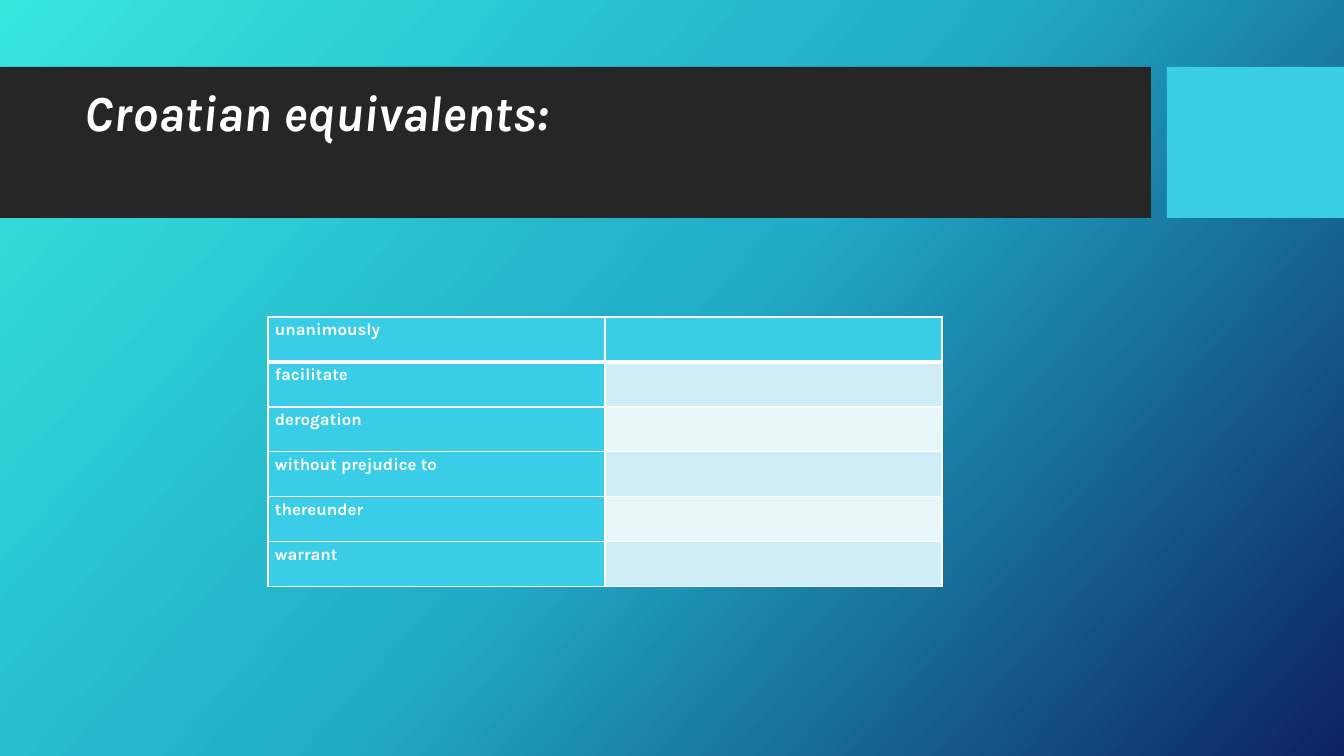
import copy

import pptx
import pptx.dml.color
import pptx.enum.shapes
import pptx.enum.text
import pptx.oxml.ns
import pptx.oxml.xmlchemy
import pptx.util
from lxml import etree

RGBColor = pptx.dml.color.RGBColor
qn = pptx.oxml.ns.qn

PX = 914400 / 100.8
WHITE = RGBColor(0xFF, 0xFF, 0xFF)
CHARCOAL = RGBColor(0x26, 0x26, 0x26)
CYAN = RGBColor(0x39, 0xCD, 0xE7)
BAND_DARK = RGBColor(0xCE, 0xED, 0xF6)
BAND_LIGHT = RGBColor(0xE8, 0xF6, 0xFA)
AQUA = RGBColor(0x36, 0xE6, 0xDD)
TEAL = RGBColor(0x21, 0xAB, 0xC8)
NAVY = RGBColor(0x0C, 0x22, 0x63)


def px(*lengths):
    return [pptx.util.Emu(round(length * PX)) for length in lengths]


def style_font(font, **values):
    for key, value in values.items():
        setattr(font, key, value)
    font.color.rgb = WHITE


deck = pptx.Presentation()
deck.slide_width, deck.slide_height = px(1344, 756)
slide = deck.slides.add_slide(deck.slide_layouts[6])

backdrop = slide.background.fill
backdrop.gradient()
backdrop.gradient_angle = 318
stop_list = slide.element.find(".//" + qn("a:gsLst"))
stop_list.insert(1, copy.deepcopy(stop_list[0]))
for stop, position, color in zip(backdrop.gradient_stops, (0, 0.5, 1), (AQUA, TEAL, NAVY)):
    stop.position = position
    stop.color.rgb = color

for left, width, color in ((0, 1151, CHARCOAL), (1167, 177, CYAN)):
    band = slide.shapes.add_shape(
        pptx.enum.shapes.MSO_SHAPE.RECTANGLE, *px(left, 67, width, 151))
    band.shadow.inherit = False
    band.fill.solid()
    band.fill.fore_color.rgb = color
    band.line.fill.background()

heading = slide.shapes.add_textbox(*px(75, 83, 1059, 119)).text_frame
heading.word_wrap = True
heading.vertical_anchor = pptx.enum.text.MSO_ANCHOR.TOP
title = heading.paragraphs[0]
title.line_spacing = 0.9
title.text = "Croatian equivalents:"
style_font(title.runs[0].font, name="Karla", size=pptx.util.Pt(36), bold=True, italic=True)

terms = ["unanimously", "facilitate", "derogation", "without prejudice to", "thereunder", "warrant"]
ROW_HEIGHT = 45
glossary = slide.shapes.add_table(
    len(terms), 2, *px(268, 317, 674, ROW_HEIGHT * len(terms))).table
margins = dict(zip(("margin_left", "margin_top", "margin_right", "margin_bottom"), px(7, 0, 7, 0)))

for row, term in enumerate(terms):
    glossary.rows[row].height = px(ROW_HEIGHT)[0]
    band_color = CYAN if row == 0 else BAND_DARK if row % 2 else BAND_LIGHT
    for column, color in enumerate((CYAN, band_color)):
        cell = glossary.cell(row, column)
        for key, value in margins.items():
            setattr(cell, key, value)
        edges = {"a:lnL": 1, "a:lnR": 1, "a:lnT": 3 if row == 1 else 1, "a:lnB": 3 if row == 0 else 1}
        properties = cell._tc.get_or_add_tcPr()
        for tag, points in edges.items():
            edge = etree.SubElement(properties, qn(tag), w=str(pptx.util.Pt(points)))
            paint = etree.SubElement(edge, qn("a:solidFill"))
            etree.SubElement(paint, qn("a:srgbClr"), val=str(WHITE))
        cell.fill.solid()
        cell.fill.fore_color.rgb = color
    entry = glossary.cell(row, 0).text_frame.paragraphs[0]
    entry.alignment = pptx.enum.text.PP_ALIGN.JUSTIFY
    entry.line_spacing = 1.15
    entry.text = term
    style_font(entry.runs[0].font, name="Karla", size=pptx.util.Pt(12), bold=True)

deck.save("out.pptx")
